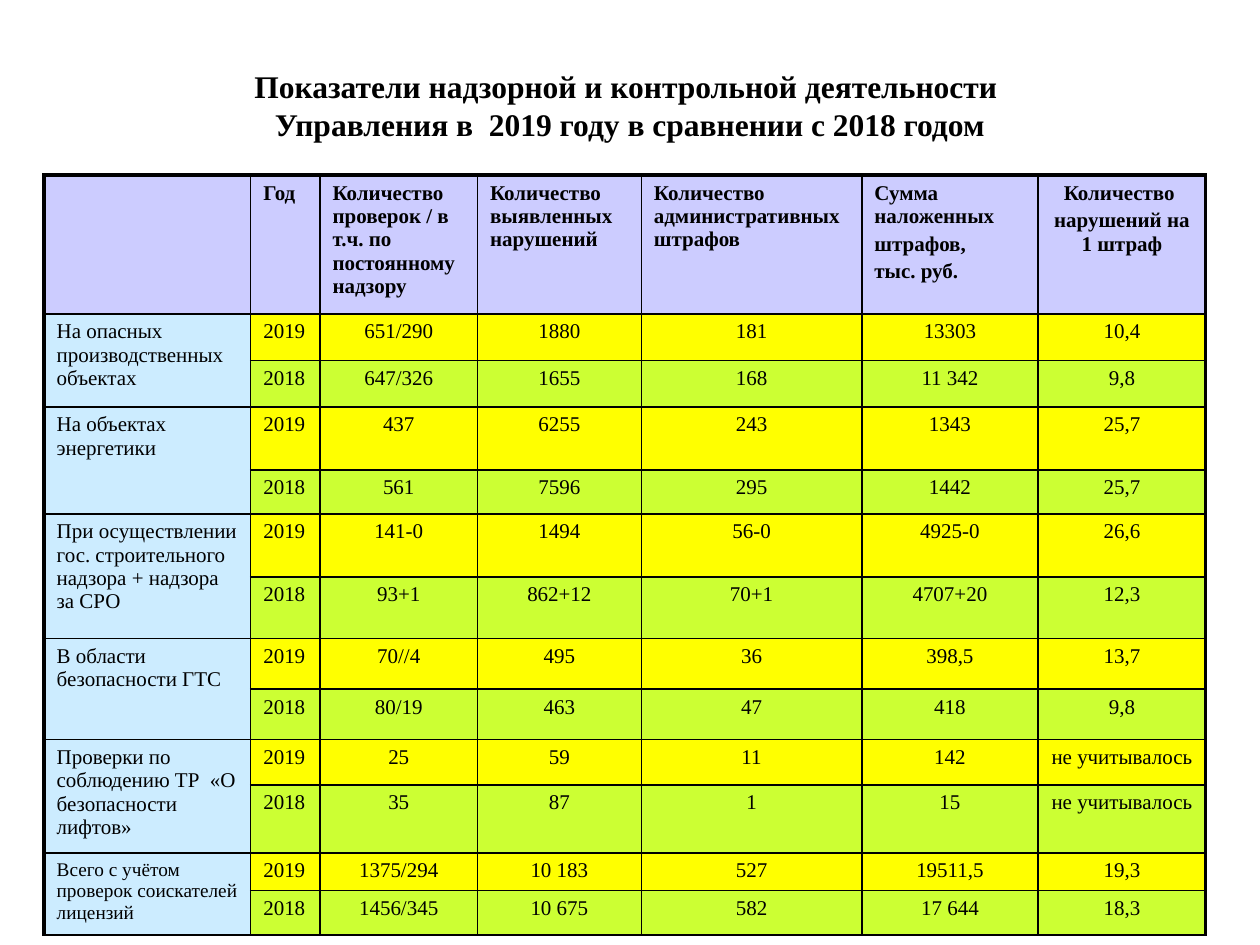
from lxml import etree
from pptx import Presentation
from pptx.dml.color import RGBColor
from pptx.enum.text import MSO_ANCHOR, PP_ALIGN
from pptx.oxml.ns import qn
from pptx.util import Inches, Pt

LEFT, CENTER = PP_ALIGN.LEFT, PP_ALIGN.CENTER
MIDDLE = MSO_ANCHOR.MIDDLE
FONT = "Times New Roman"
COLORS = {
    "ink": "000000",
    "header": "CCCCFF",
    "area": "CCECFF",
    "2019": "FFFF00",
    "2018": "CCFF33",
}
TITLE = [
    "Показатели надзорной и контрольной деятельности ",
    "Управления в  2019 году в сравнении с 2018 годом",
]
HEADINGS = [
    [],
    ["Год"],
    ["Количество проверок / в т.ч. по постоянному надзору"],
    ["Количество выявленных нарушений"],
    ["Количество административных штрафов"],
    ["Сумма наложенных", "штрафов,", "тыс. руб."],
    ["Количество ", "нарушений на 1 штраф"],
]
AREAS = [
    ("На опасных производственных объектах", 12,
     ["651/290", "1880", "181", "13303", "10,4"],
     ["647/326", "1655", "168", "11 342", "9,8"]),
    ("На объектах энергетики", 12,
     ["437", "6255", "243", "1343", "25,7"],
     ["561", "7596", "295", "1442", "25,7"]),
    ("При осуществлении гос. строительного надзора + надзора за СРО", 12,
     ["141-0", "1494", "56-0", "4925-0", "26,6"],
     ["93+1", "862+12", "70+1", "4707+20", "12,3"]),
    ("В области безопасности ГТС", 12,
     ["70//4", "495", "36", "398,5", "13,7"],
     ["80/19", "463", "47", "418", "9,8"]),
    ("Проверки по соблюдению ТР  «О безопасности лифтов»", 12,
     ["25", "59", "11", "142", "не учитывалось"],
     ["35", "87", "1", "15", "не учитывалось"]),
    ("Всего с учётом проверок соискателей лицензий", 11,
     ["1375/294", "10 183", "527", "19511,5", "19,3"],
     ["1456/345", "10 675", "582", "17 644", "18,3"]),
]
COLUMN_WIDTHS = [1.64, 0.55, 1.25, 1.3, 1.75, 1.4, 1.33]
ROW_HEIGHTS = [1.1, 0.37, 0.37, 0.5, 0.35, 0.5, 0.49, 0.4, 0.4, 0.36, 0.54, 0.3, 0.35]


def add_run(paragraph, text, size, bold):
    run = paragraph.add_run()
    run.text = text
    run.font.name = FONT
    run.font.size = Pt(size)
    run.font.bold = bold
    run.font.color.rgb = RGBColor.from_string(COLORS["ink"])


def add_border(cell, side, width):
    properties = cell._tc.get_or_add_tcPr()
    line = etree.SubElement(properties, qn(f"a:ln{side}"), w=str(Pt(width)))
    fill = etree.SubElement(line, qn("a:solidFill"))
    etree.SubElement(fill, qn("a:srgbClr"), val=COLORS["ink"])


def style_cell(cell, color, outer_sides):
    for side in "LRTB":
        add_border(cell, side, 2.25 if side in outer_sides else 1)
    cell.fill.solid()
    cell.fill.fore_color.rgb = RGBColor.from_string(COLORS[color])


def write_cell(cell, lines, align, size=12, bold=False):
    frame = cell.text_frame
    for index, line in enumerate(lines):
        paragraph = frame.add_paragraph() if index else frame.paragraphs[0]
        if index:
            paragraph.space_before = Pt(size * 0.2)
        paragraph.alignment = align
        add_run(paragraph, line, size, bold)


def add_title(slide, left, top, width, height):
    frame = slide.shapes.add_textbox(left, top, width, height).text_frame
    frame.word_wrap = True
    frame.vertical_anchor = MIDDLE
    paragraph = frame.paragraphs[0]
    paragraph.alignment = CENTER
    for index, line in enumerate(TITLE):
        if index:
            paragraph.add_line_break()
        add_run(paragraph, line, 18, True)


def add_indicators(slide, left, top, width, height):
    last = len(COLUMN_WIDTHS) - 1
    table = slide.shapes.add_table(
        len(ROW_HEIGHTS), len(COLUMN_WIDTHS), left, top, width, height
    ).table
    table.first_row = False
    table.horz_banding = False
    for column, share in zip(table.columns, COLUMN_WIDTHS):
        column.width = int(width * share / sum(COLUMN_WIDTHS))
    for row, share in zip(table.rows, ROW_HEIGHTS):
        row.height = int(height * share / sum(ROW_HEIGHTS))

    for row in range(len(ROW_HEIGHTS)):
        for column in range(len(COLUMN_WIDTHS)):
            outer_sides = {0: "L", last: "R"}.get(column, "")
            if row == 0:
                color = "header"
                outer_sides += "T"
            elif column == 0:
                color = "area"
            else:
                color = "2019" if row % 2 else "2018"
            style_cell(table.cell(row, column), color, outer_sides)

    for column, lines in enumerate(HEADINGS):
        align = CENTER if column == last else LEFT
        write_cell(table.cell(0, column), lines, align, bold=True)

    for index, (area, size, *years) in enumerate(AREAS):
        first = 1 + 2 * index
        area_cell = table.cell(first, 0)
        area_cell.merge(table.cell(first + 1, 0))
        write_cell(area_cell, [area], LEFT, size)
        for row, (year, values) in enumerate(zip(("2019", "2018"), years), first):
            write_cell(table.cell(row, 1), [year], LEFT)
            for column, value in enumerate(values, 2):
                write_cell(table.cell(row, column), [value], CENTER)


def main():
    presentation = Presentation()
    presentation.slide_width = Inches(10)
    presentation.slide_height = Inches(7.5)
    slide = presentation.slides.add_slide(presentation.slide_layouts[6])
    add_title(slide, Inches(0.75), Inches(0.21), Inches(8.5), Inches(1.25))
    add_indicators(slide, Inches(0.35), Inches(1.39), Inches(9.22), Inches(6.03))
    presentation.save("out.pptx")


if __name__ == "__main__":
    main()
